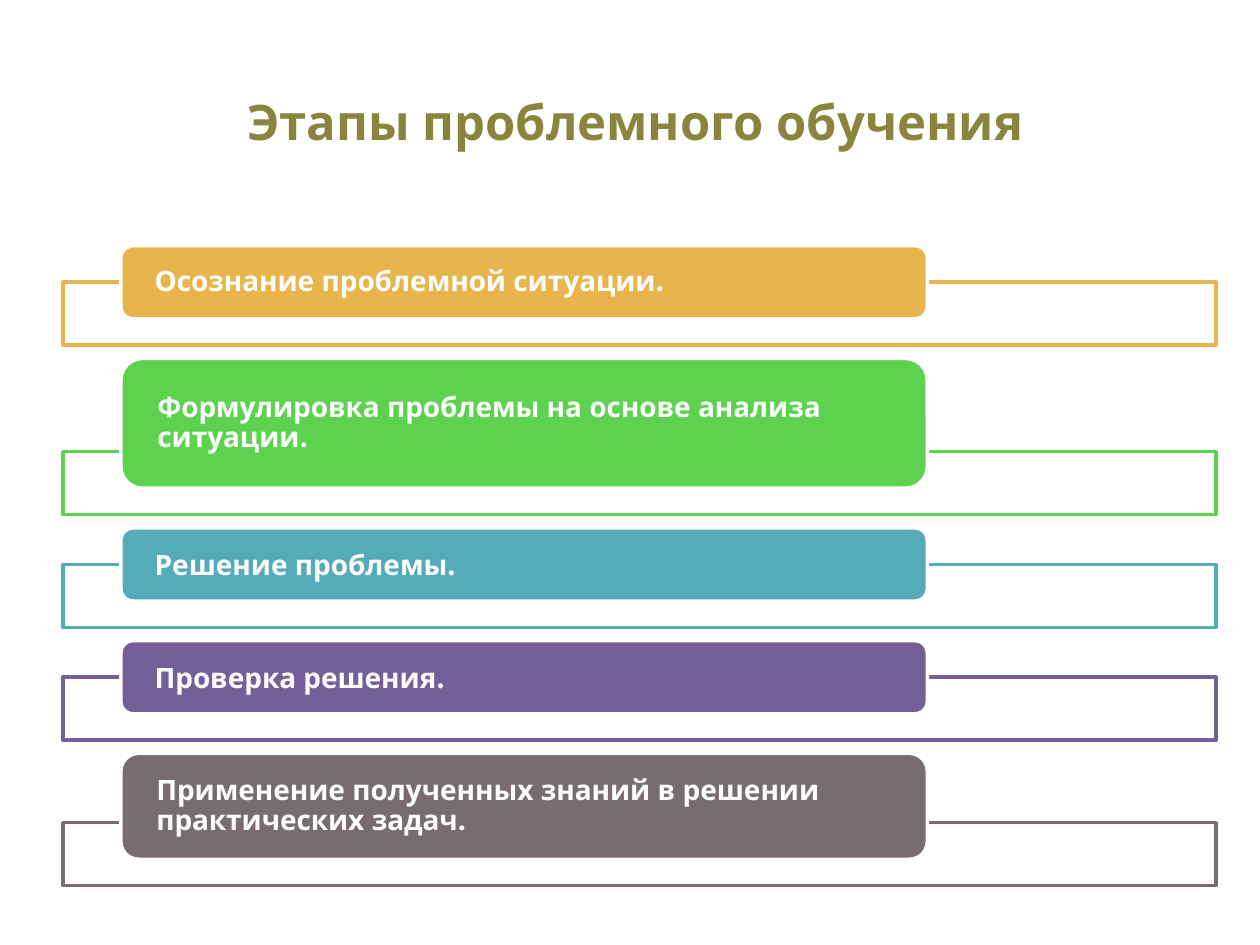
from pptx import Presentation
from pptx.dml.color import RGBColor
from pptx.enum.shapes import MSO_SHAPE
from pptx.enum.text import MSO_ANCHOR, PP_ALIGN
from pptx.util import Inches, Pt

THEME = {
    "font": "League Spartan",
    "title_size": 28,
    "stage_size": 16,
    "title": "8A853C",
    "white": "FFFFFF",
    "line": 2,
}

# Text, colour, label height in grid units, line spacing
STAGES = [
    ("Осознание проблемной ситуации.", "E8B54D", 5.8, 0.9),
    ("Формулировка проблемы на основе анализа ситуации.", "5CD24F", 10.3, 0.9),
    ("Решение проблемы.", "55ABB8", 5.8, 1.0),
    ("Проверка решения.", "745F99", 5.8, 1.0),
    ("Применение полученных знаний в решении практических задач.", "786C71", 8.4, 0.9),
]

deck = Presentation()
deck.slide_width, deck.slide_height = Inches(10), Inches(7.5)
page = deck.slides.add_slide(deck.slide_layouts[6])
unit = deck.slide_width / 100  # grid of 100 columns by 75 rows


def add_panel(kind, left, top, width, height, fill, line):
    panel = page.shapes.add_shape(kind, *(round(n * unit) for n in (left, top, width, height)))
    panel.shadow.inherit = False
    panel.fill.solid()
    panel.fill.fore_color.rgb = RGBColor.from_string(fill)
    panel.line.color.rgb = RGBColor.from_string(line)
    panel.line.width = Pt(THEME["line"])
    return panel


def write(box, text, size, color, align):
    frame = box.text_frame
    frame.word_wrap = True
    frame.text = text
    para = frame.paragraphs[0]
    para.alignment = align
    font = para.runs[0].font
    font.name, font.size, font.bold = THEME["font"], Pt(size), True
    font.color.rgb = RGBColor.from_string(color)
    return frame


FRAME_HEIGHT = 5
OVERLAP = 2.9  # how far each label reaches down into its frame
GAP = 1.05  # from a frame to the next label

top = 19.5
for text, color, height, spacing in STAGES:
    frame_top = top + height - OVERLAP
    add_panel(MSO_SHAPE.RECTANGLE, 5, frame_top, 91.5, FRAME_HEIGHT, THEME["white"], color)
    label = add_panel(MSO_SHAPE.ROUNDED_RECTANGLE, 9.6, top, 64, height, color, THEME["white"])
    label_text = write(label, text, THEME["stage_size"], THEME["white"], PP_ALIGN.LEFT)
    label_text.vertical_anchor = MSO_ANCHOR.MIDDLE
    label_text.margin_left = label_text.margin_right = round(2.4 * unit)
    label_text.margin_top = label_text.margin_bottom = 0
    label_text.paragraphs[0].line_spacing = spacing
    top = frame_top + FRAME_HEIGHT + GAP

title = page.shapes.add_textbox(*(round(n * unit) for n in (5.9, 6.8, 89, 5.7)))
write(title, "Этапы проблемного обучения", THEME["title_size"], THEME["title"], PP_ALIGN.CENTER)

deck.save("out.pptx")
